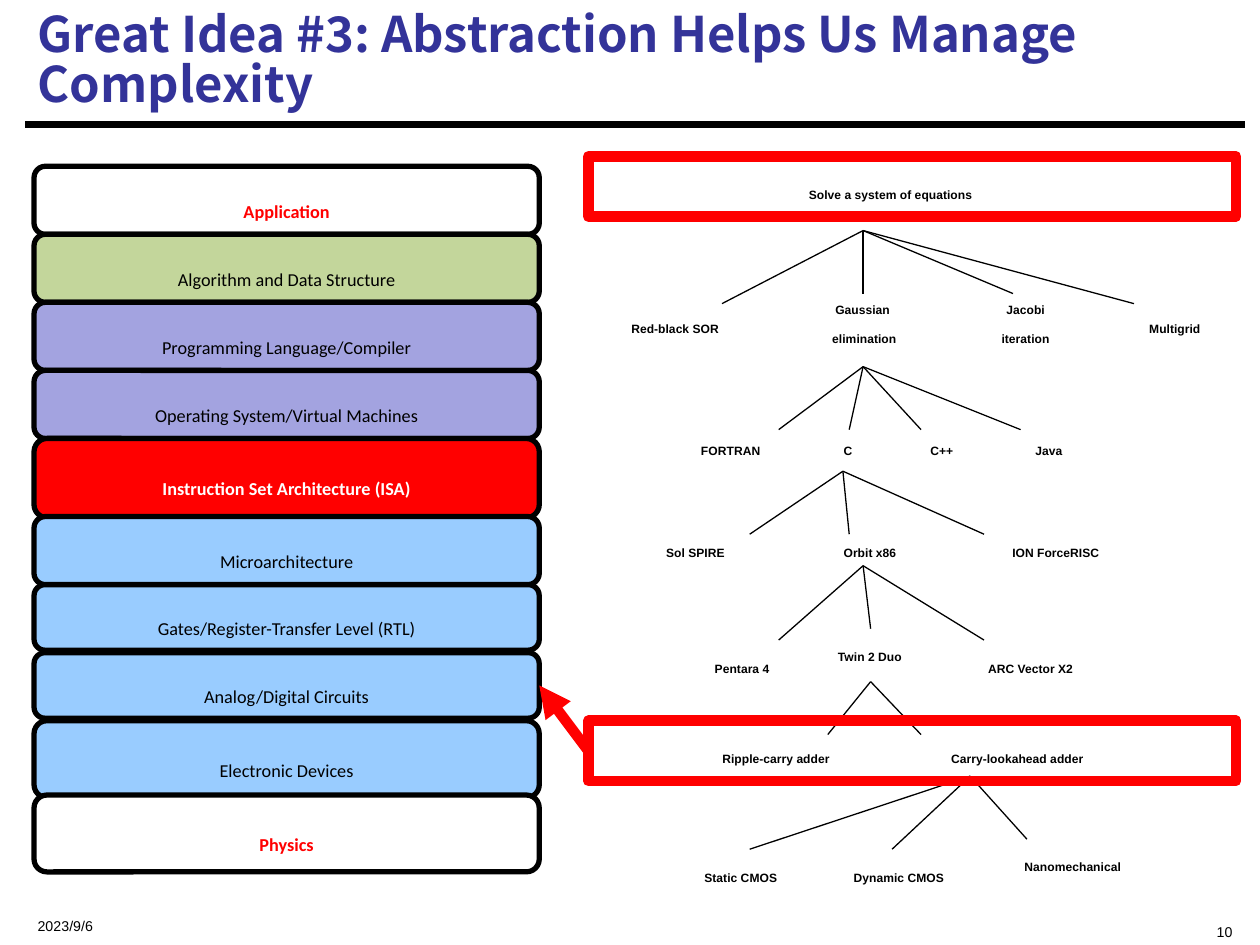
from lxml import etree
from pptx import Presentation
from pptx.dml.color import RGBColor
from pptx.enum.shapes import MSO_CONNECTOR, MSO_SHAPE
from pptx.enum.text import MSO_ANCHOR, MSO_AUTO_SIZE, PP_ALIGN
from pptx.oxml.ns import qn
from pptx.util import Inches, Pt

LINE = MSO_CONNECTOR.STRAIGHT
RECT, ROUND = MSO_SHAPE.RECTANGLE, MSO_SHAPE.ROUNDED_RECTANGLE
MID, TOP = MSO_ANCHOR.MIDDLE, MSO_ANCHOR.TOP
LEFT, CENTER, RIGHT = PP_ALIGN.LEFT, PP_ALIGN.CENTER, PP_ALIGN.RIGHT
GROW, FIXED = MSO_AUTO_SIZE.SHAPE_TO_FIT_TEXT, MSO_AUTO_SIZE.NONE

BLACK = RGBColor(0x00, 0x00, 0x00)
WHITE = RGBColor(0xFF, 0xFF, 0xFF)
RED = RGBColor(0xFF, 0x00, 0x00)
NAVY = RGBColor(0x33, 0x33, 0x99)
GREEN = RGBColor(0xC3, 0xD6, 0x9B)
LILAC = RGBColor(0xA3, 0xA3, 0xE0)
SKY = RGBColor(0x99, 0xCC, 0xFF)

prs = Presentation()
prs.slide_width, prs.slide_height = Inches(10), Inches(7.5)
slide = prs.slides.add_slide(prs.slide_layouts[5])
shapes = slide.shapes


def write(frame, text, size, font, color, bold, align, sub=True):
    for i, words in enumerate(text.split("\n")):
        para = frame.add_paragraph() if i else frame.paragraphs[0]
        para.alignment = align
        run = para.add_run()
        run.text = words
        run.font.size = Pt(size)
        run.font.name = font
        run.font.bold = bold
        run.font.color.rgb = color
        if sub:
            run._r.get_or_add_rPr().set("baseline", "-25000")


def draw(start, end, color, width):
    line = shapes.add_connector(LINE, *[Inches(v) for v in start + end])
    line.line.color.rgb = color
    line.line.width = Pt(width)
    etree.SubElement(line._element.spPr, qn("a:effectLst"))
    return line


draw((0.2, 0.99), (9.88, 0.99), BLACK, 3.75)

title = shapes.title
title.left, title.top = Inches(0.2), Inches(0.08)
title.width, title.height = Inches(9.67), Inches(0.84)
frame = title.text_frame
frame.word_wrap = True
frame.auto_size = FIXED
frame.vertical_anchor = MID
write(frame, "Great Idea #3: Abstraction Helps Us Manage Complexity",
      28, "Noto Sans CJK SC", NAVY, True, LEFT, False)
frame.paragraphs[0].line_spacing = 0.85

footers = [
    (0.2, 2.5, "2023/9/6", MID, LEFT),
    (6.88, 3, "10", TOP, RIGHT),
]
for left, width, text, anchor, align in footers:
    box = shapes.add_textbox(Inches(left), Inches(7.15), Inches(width), Inches(0.27))
    box.text_frame.word_wrap = True
    box.text_frame.vertical_anchor = anchor
    write(box.text_frame, text, 14, "Arial", BLACK, False, align)

labels = [
    (5.62, 1.33, 2.9, "Solve a system of equations"),
    (6.22, 2.24, 1.28, "Gaussian \nelimination"),
    (7.63, 2.24, 1.02, "Jacobi\niteration"),
    (4.53, 2.39, 1.66, "Red-black SOR"),
    (8.79, 2.39, 1.07, "Multigrid"),
    (5.2, 3.36, 1.2, "FORTRAN"),
    (6.54, 3.36, 0.38, "C"),
    (7.17, 3.36, 0.61, "C++"),
    (7.99, 3.36, 0.67, "Java"),
    (6.39, 4.17, 1.03, "Orbit x86"),
    (4.85, 4.17, 1.34, "Sol SPIRE"),
    (7.62, 4.17, 1.52, "ION ForceRISC"),
    (5.3, 5.09, 1.18, "Pentara 4"),
    (6.26, 4.99, 1.29, "Twin 2 Duo"),
    (7.35, 5.09, 1.66, "ARC Vector X2"),
    (5.17, 5.8, 1.98, "Ripple-carry adder"),
    (6.88, 5.8, 2.39, "Carry-lookahead adder"),
    (5.17, 6.75, 1.42, "Static CMOS"),
    (6.28, 6.75, 1.71, "Dynamic CMOS"),
    (7.61, 6.66, 1.81, "Nanomechanical"),
]
for left, top, width, text in labels:
    height = 0.51 if "\n" in text else 0.3
    box = shapes.add_textbox(Inches(left), Inches(top), Inches(width), Inches(height))
    box.text_frame.word_wrap = False
    box.text_frame.auto_size = GROW
    write(box.text_frame, text, 12, "Arial", BLACK, True, CENTER)

fans = [
    ((6.85, 1.83), [(5.73, 2.41), (6.85, 2.33), (8.04, 2.33), (9, 2.41)]),
    ((6.85, 2.91), [(6.18, 3.41), (6.74, 3.41), (7.31, 3.41), (8.1, 3.41)]),
    ((6.69, 3.74), [(5.95, 4.24), (6.74, 4.24), (7.81, 4.24)]),
    ((6.85, 4.49), [(6.18, 5.08), (6.91, 4.99), (7.81, 5.08)]),
    ((6.91, 5.41), [(6.57, 5.83), (7.31, 5.83)]),
    ((7.7, 6.16), [(5.95, 6.74), (7.08, 6.74), (8.15, 6.66)]),
]
for root, ends in fans:
    for end in ends:
        draw(root, end, BLACK, 0.75)

for top in (1.24, 5.72):
    frame = shapes.add_shape(RECT, Inches(4.67), Inches(top), Inches(5.14), Inches(0.48))
    frame.shadow.inherit = False
    frame.fill.background()
    frame.line.color.rgb = RED
    frame.line.width = Pt(6)

layers = [
    (1.32, 0.54, "Application", WHITE, RED),
    (1.86, 0.54, "Algorithm and Data Structure", GREEN, BLACK),
    (2.4, 0.54, "Programming Language/Compiler", LILAC, BLACK),
    (2.94, 0.54, "Operating System/Virtual Machines", LILAC, BLACK),
    (3.48, 0.63, "Instruction Set Architecture (ISA)", RED, WHITE),
    (4.1, 0.54, "Microarchitecture", SKY, BLACK),
    (4.64, 0.52, "Gates/Register-Transfer Level (RTL)", SKY, BLACK),
    (5.18, 0.52, "Analog/Digital Circuits", SKY, BLACK),
    (5.72, 0.61, "Electronic Devices", SKY, BLACK),
    (6.31, 0.61, "Physics", WHITE, RED),
]
stack = {}
for top, height, text, fill, color in layers:
    box = shapes.add_shape(ROUND, Inches(0.27), Inches(top), Inches(4.01), Inches(height))
    box.shadow.inherit = False
    box.fill.solid()
    box.fill.fore_color.rgb = fill
    box.line.color.rgb = BLACK
    box.line.width = Pt(3)
    box.text_frame.word_wrap = False
    box.text_frame.vertical_anchor = MID
    write(box.text_frame, text, 18, "Calibri", color, color != BLACK, CENTER)
    stack[text] = box

arrow = draw((4.67, 5.96), (4.28, 5.44), RED, 6)
arrow.begin_connect(frame, 1)
arrow.end_connect(stack["Analog/Digital Circuits"], 3)
etree.SubElement(arrow.line._get_or_add_ln(), qn("a:tailEnd"), type="triangle")

prs.save("out.pptx")
